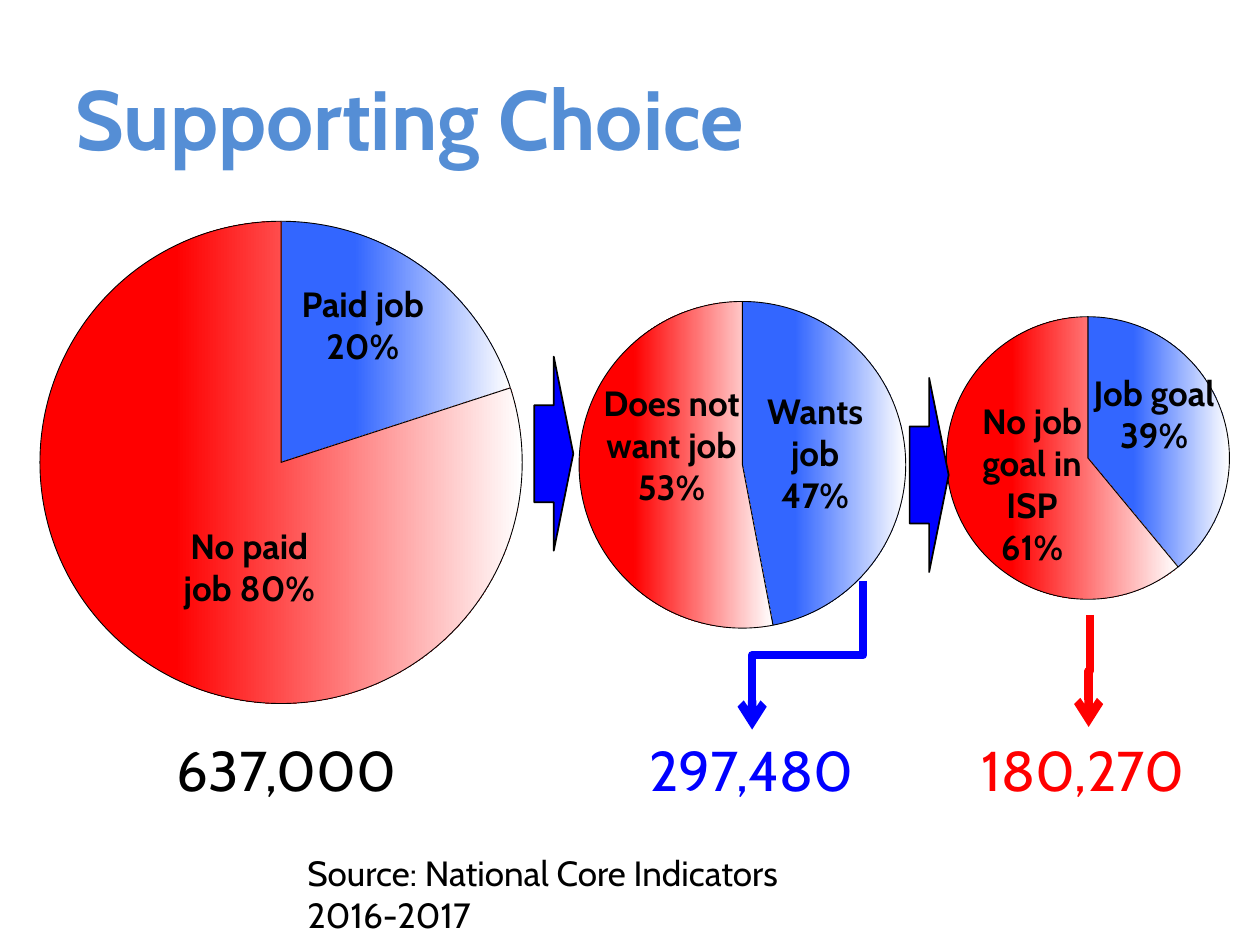
import lxml.etree
import pptx
import pptx.chart.data
import pptx.dml.color
import pptx.enum.chart
import pptx.enum.shapes
import pptx.enum.text
import pptx.oxml
import pptx.oxml.ns
import pptx.util

Pt = pptx.util.Pt
qn = pptx.oxml.ns.qn
SubElement = lxml.etree.SubElement
PP_ALIGN = pptx.enum.text.PP_ALIGN
BLACK, BLUE, RED = "000000", "0000FF", "FF0000"


def colour(value):
    return pptx.dml.color.RGBColor.from_string(value)


class SlideBuilder:
    """Hold the style and the current slide, and add each kind of element."""

    font = "Cabin"
    slices = [(0.32, "3366FF"), (0.28, "FF0000")]
    plot = {"x": 0.07, "y": 0, "w": 0.845, "h": 0.973}

    def __init__(self, deck):
        self.page = deck.slides.add_slide(deck.slide_layouts[5])

    def set_lines(self, box, lines, size, ink, bold, align):
        frame = box.text_frame
        frame.word_wrap = True
        for index, line in enumerate(lines):
            para = frame.add_paragraph() if index else frame.paragraphs[0]
            para.text = line
            para.alignment = align
            for span in para.runs:
                span.font.name = self.font
                span.font.size = Pt(size)
                span.font.bold = bold
                span.font.color.rgb = colour(ink)

    def title(self, text, left, top, width, height):
        box = self.page.shapes.title
        box.left, box.top, box.width, box.height = map(Pt, (left, top, width, height))
        self.set_lines(box, [text], 48, "558ED5", True, PP_ALIGN.LEFT)
        box.text_frame.vertical_anchor = pptx.enum.text.MSO_ANCHOR.MIDDLE

    def text(self, lines, left, top, width, height, size=20, ink=BLACK, bold=False):
        box = self.page.shapes.add_textbox(*map(Pt, (left, top, width, height)))
        self.set_lines(box, lines, size, ink, bold, PP_ALIGN.CENTER)
        box.text_frame.auto_size = pptx.enum.text.MSO_AUTO_SIZE.SHAPE_TO_FIT_TEXT

    def source(self, text, left, top, width, height):
        box = self.page.shapes.add_textbox(*map(Pt, (left, top, width, height)))
        self.set_lines(box, [text], 20, BLACK, False, PP_ALIGN.LEFT)
        box.text_frame.vertical_anchor = pptx.enum.text.MSO_ANCHOR.MIDDLE

    def pie(self, values, left, top, width, height):
        data = pptx.chart.data.CategoryChartData()
        data.categories = ["1", "2"]
        data.add_series("Series 1", values)
        chart = self.page.shapes.add_chart(
            pptx.enum.chart.XL_CHART_TYPE.PIE, *map(Pt, (left, top, width, height)), data
        ).chart
        chart.has_legend = False
        chart.has_title = False
        chart.font.name = "Calibri"
        chart.font.size = Pt(18)
        chart.font.color.rgb = colour(BLACK)
        chart.plots[0].vary_by_categories = True
        for index, (start, shade) in enumerate(self.slices):
            part = chart.plots[0].series[0].points[index].format
            part.fill.gradient()
            part.fill.gradient_angle = 0
            for stop, (position, ink) in zip(
                part.fill.gradient_stops, [(start, shade), (1, "FFFFFF")]
            ):
                stop.position = position
                stop.color.rgb = colour(ink)
            part.line.color.rgb = colour(BLACK)
            part.line.width = Pt(0.5)
        self.place_plot(chart)

    def place_plot(self, chart):
        area = chart.plots[0]._element.getparent()
        for old in area.findall(qn("c:layout")):
            area.remove(old)
        layout = lxml.etree.Element(qn("c:layout"))
        area.insert(0, layout)
        manual = SubElement(layout, qn("c:manualLayout"))
        settings = [("layoutTarget", "inner"), ("xMode", "edge"), ("yMode", "edge")]
        for name, value in settings + list(self.plot.items()):
            SubElement(manual, qn(f"c:{name}")).set("val", str(value))

    def block_arrow(self, left, top, width, height):
        shape = self.page.shapes.add_shape(
            pptx.enum.shapes.MSO_SHAPE.RIGHT_ARROW, *map(Pt, (left, top, width, height))
        )
        shape.shadow.inherit = False
        shape.fill.solid()
        shape.fill.fore_color.rgb = colour(BLUE)
        shape.line.color.rgb = colour(BLACK)
        shape.line.width = Pt(1)

    def down_connector(self, left, top, width, height, ink):
        line = self.page.shapes.add_connector(
            pptx.enum.shapes.MSO_CONNECTOR.ELBOW,
            *map(Pt, (left, top, left + width, top + height)),
        )
        line.line.color.rgb = colour(ink)
        line.line.width = Pt(4.75)
        properties = line._element.spPr
        properties.find(qn("a:xfrm")).set("rot", "5400000")
        SubElement(properties.find(qn("a:ln")), qn("a:tailEnd")).set("type", "arrow")
        SubElement(properties, qn("a:effectLst"))


def main():
    deck = pptx.Presentation()
    deck.slide_width, deck.slide_height = Pt(720), Pt(540)
    slide = SlideBuilder(deck)
    slide.title("Supporting Choice", 36, 21.6, 648, 90)

    slide.pie([20, 80], 0, 121, 326.2, 294.5)
    slide.pie([47, 53], 315.4, 171.4, 221, 193.7)
    slide.pie([39, 61], 526.3, 180.7, 193.7, 166.3)

    for left, top in [(305.3, 203.8), (519.8, 216)]:
        slide.block_arrow(left, top, 22.3, 110.9)

    labels = [
        (["No paid job 80%"], 95, 295.9, 55.4),
        (["Paid job 20%"], 159.8, 157.7, 55.4),
        (["Does not want job", "53%"], 336.2, 214.6, 72.7),
        (["Wants job", "47%"], 418.3, 218.9, 51.1),
        (["No job goal in ISP", "61%"], 542.2, 224.6, 104.4),
        (["Job goal 39%"], 612, 208.8, 55.4),
    ]
    for lines, left, top, height in labels:
        slide.text(lines, left, top, 95, height, bold=True)

    slide.down_connector(419, 342.7, 85, 63.4, BLUE)
    slide.down_connector(590.4, 383, 64.1, 0.7, RED)

    slide.source("Source: National Core Indicators\n2016-2017", 168.5, 496.1, 394.6, 28.8)
    totals = [("637,000", 87.1, BLACK), ("297,480", 352.8, BLUE), ("180,270", 542.2, RED)]
    for total, left, ink in totals:
        slide.text([total], left, 416.9, 153.4, 46.1, size=32, ink=ink)

    deck.save("out.pptx")


if __name__ == "__main__":
    main()
